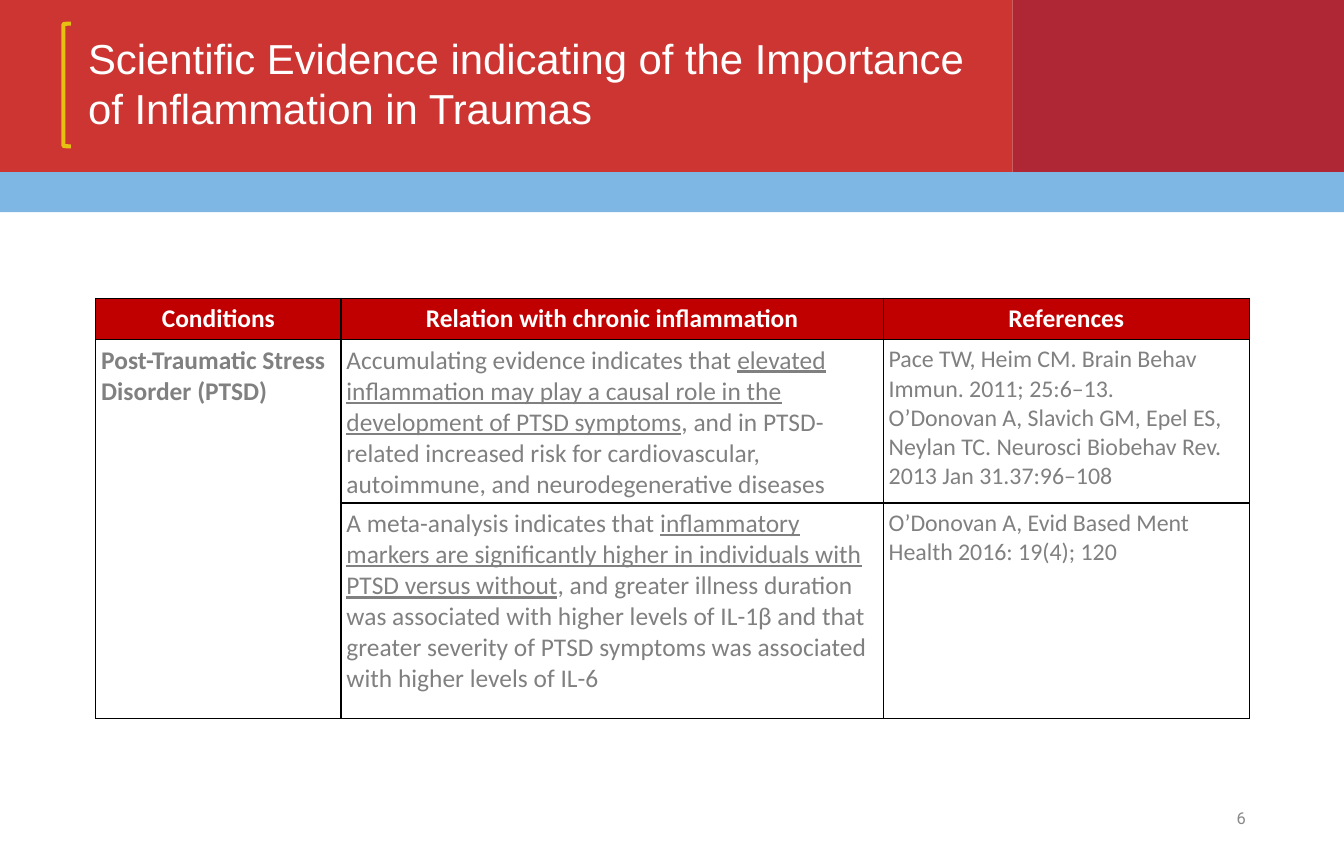
import pptx
import pptx.dml.color
import pptx.enum.shapes
import pptx.enum.text
import pptx.oxml
import pptx.oxml.ns
import pptx.util

RGBColor = pptx.dml.color.RGBColor
Shape = pptx.enum.shapes.MSO_SHAPE
Align = pptx.enum.text.PP_ALIGN
Anchor = pptx.enum.text.MSO_ANCHOR

RED = RGBColor(0xCC, 0x35, 0x32)
CRIMSON = RGBColor(0xAF, 0x26, 0x35)
SKY = RGBColor(0x7E, 0xB7, 0xE4)
GOLD = RGBColor(0xE7, 0xC1, 0x12)
HEADER_RED = RGBColor(0xC0, 0x00, 0x00)
WHITE = RGBColor(0xFF, 0xFF, 0xFF)
GRAY = RGBColor(0x80, 0x80, 0x80)
PAGE_GRAY = RGBColor(0x88, 0x88, 0x88)

SLIDE_WIDTH = pptx.util.Inches(12.49)
SLIDE_HEIGHT = pptx.util.Inches(7.96)
INSET = pptx.util.Inches(0.05)

HEADINGS = ["Conditions", "Relation with chronic inflammation", "References"]
CONDITION = ["Post-Traumatic Stress Disorder (PTSD)"]
FINDINGS = [
    "Accumulating evidence indicates that _elevated inflammation may play a "
    "causal role in the development of PTSD symptoms_, and in PTSD-related "
    "increased risk for cardiovascular, autoimmune, and neurodegenerative diseases",
    "A meta-analysis indicates that _inflammatory markers are significantly "
    "higher in individuals with PTSD versus without_, and greater illness "
    "duration was associated with higher levels of IL-1β and that greater "
    "severity of PTSD symptoms was associated with higher levels of IL-6",
]
REFERENCES = [
    ["Pace TW, Heim CM. Brain Behav Immun. 2011; 25:6–13.",
     "O’Donovan A, Slavich GM, Epel ES, Neylan TC. Neurosci Biobehav Rev. "
     "2013 Jan 31.37:96–108"],
    ["O’Donovan A, Evid Based Ment Health 2016: 19(4); 120"],
]
COLUMN_SHARES = [18.25, 40.35, 27.22]
ROW_SHARES = [4.77, 17.96, 25.13]


def across(percent):
    return round(SLIDE_WIDTH * percent / 100)


def down(percent):
    return round(SLIDE_HEIGHT * percent / 100)


def area(left, top, width, height):
    return across(left), down(top), across(width), down(height)


def write(frame, paragraphs, size, color, font="Calibri", bold=False, align=Align.LEFT):
    for index, content in enumerate(paragraphs):
        paragraph = frame.add_paragraph() if index else frame.paragraphs[0]
        paragraph.alignment = align
        for position, piece in enumerate(content.split("_")):
            for line, words in enumerate(piece.split("\n")):
                if line:
                    paragraph.add_line_break()
                run = paragraph.add_run()
                run.text = words
                run.font.name = font
                run.font.size = pptx.util.Pt(size)
                run.font.bold = bold
                run.font.underline = position % 2 == 1
                run.font.color.rgb = color


def set_insets(holder):
    holder.margin_left = holder.margin_right = INSET
    holder.margin_top = holder.margin_bottom = INSET


def add_band(slide, place, color):
    band = slide.shapes.add_shape(Shape.RECTANGLE, *area(*place))
    band.shadow.inherit = False
    band.fill.solid()
    band.fill.fore_color.rgb = color
    band.line.fill.background()


def add_bracket(slide, place):
    bracket = slide.shapes.add_shape(Shape.LEFT_BRACKET, *area(*place))
    bracket.shadow.inherit = False
    bracket.fill.background()
    bracket.line.color.rgb = GOLD
    bracket.line.width = pptx.util.Pt(2.75)


def add_label(slide, place, content, anchor=Anchor.TOP, wrap=True, **text_format):
    frame = slide.shapes.add_textbox(*area(*place)).text_frame
    frame.word_wrap = wrap
    frame.vertical_anchor = anchor
    set_insets(frame)
    write(frame, [content], **text_format)


def add_borders(cell):
    properties = cell._tc.get_or_add_tcPr()
    for side in "LRTB":
        properties.append(pptx.oxml.parse_xml(
            f'<a:ln{side} {pptx.oxml.ns.nsdecls("a")} w="{pptx.util.Pt(1)}">'
            f'<a:solidFill><a:srgbClr val="000000"/></a:solidFill></a:ln{side}>'))


def fill_cell(cell, paragraphs, **text_format):
    cell.vertical_anchor = Anchor.TOP
    write(cell.text_frame, paragraphs, color=GRAY, **text_format)


def add_evidence_table(slide):
    place = area(7.13, 34.8, sum(COLUMN_SHARES), sum(ROW_SHARES))
    table = slide.shapes.add_table(len(ROW_SHARES), len(COLUMN_SHARES), *place).table
    table.first_row = table.horz_banding = False
    for column, share in zip(table.columns, COLUMN_SHARES):
        column.width = across(share)
    for row, share in zip(table.rows, ROW_SHARES):
        row.height = down(share)
    for cell in table.iter_cells():
        set_insets(cell)
        add_borders(cell)
        cell.fill.background()

    for column, heading in enumerate(HEADINGS):
        cell = table.cell(0, column)
        cell.fill.solid()
        cell.fill.fore_color.rgb = HEADER_RED
        cell.vertical_anchor = Anchor.MIDDLE
        write(cell.text_frame, [heading], size=17, color=WHITE, bold=True,
              align=Align.CENTER)

    table.cell(1, 0).merge(table.cell(2, 0))
    fill_cell(table.cell(1, 0), CONDITION, size=17, bold=True)
    for row, (finding, references) in enumerate(zip(FINDINGS, REFERENCES), start=1):
        fill_cell(table.cell(row, 1), [finding], size=17)
        fill_cell(table.cell(row, 2), references, size=16)


def main():
    deck = pptx.Presentation()
    deck.slide_width = SLIDE_WIDTH
    deck.slide_height = SLIDE_HEIGHT
    slide = deck.slides.add_slide(deck.slide_layouts[6])

    add_band(slide, (0, 0, 75.34, 20.2), RED)
    add_band(slide, (75.34, 0, 24.66, 20.2), CRIMSON)
    add_band(slide, (0, 20.1, 100, 4.65), SKY)
    add_bracket(slide, (4.72, 2.76, 0.56, 14.32))
    add_label(slide, (6.16, 3.14, 91.91, 12.31),
              "Scientific Evidence indicating of the Importance\n"
              "of Inflammation in Traumas",
              size=28, color=WHITE, font="Arial")
    add_evidence_table(slide)
    add_label(slide, (91.59, 93.72, 1.52, 3.39), "6", anchor=Anchor.MIDDLE,
              wrap=False, size=11, color=PAGE_GRAY, font="Roboto", align=Align.RIGHT)

    deck.save("out.pptx")


if __name__ == "__main__":
    main()
